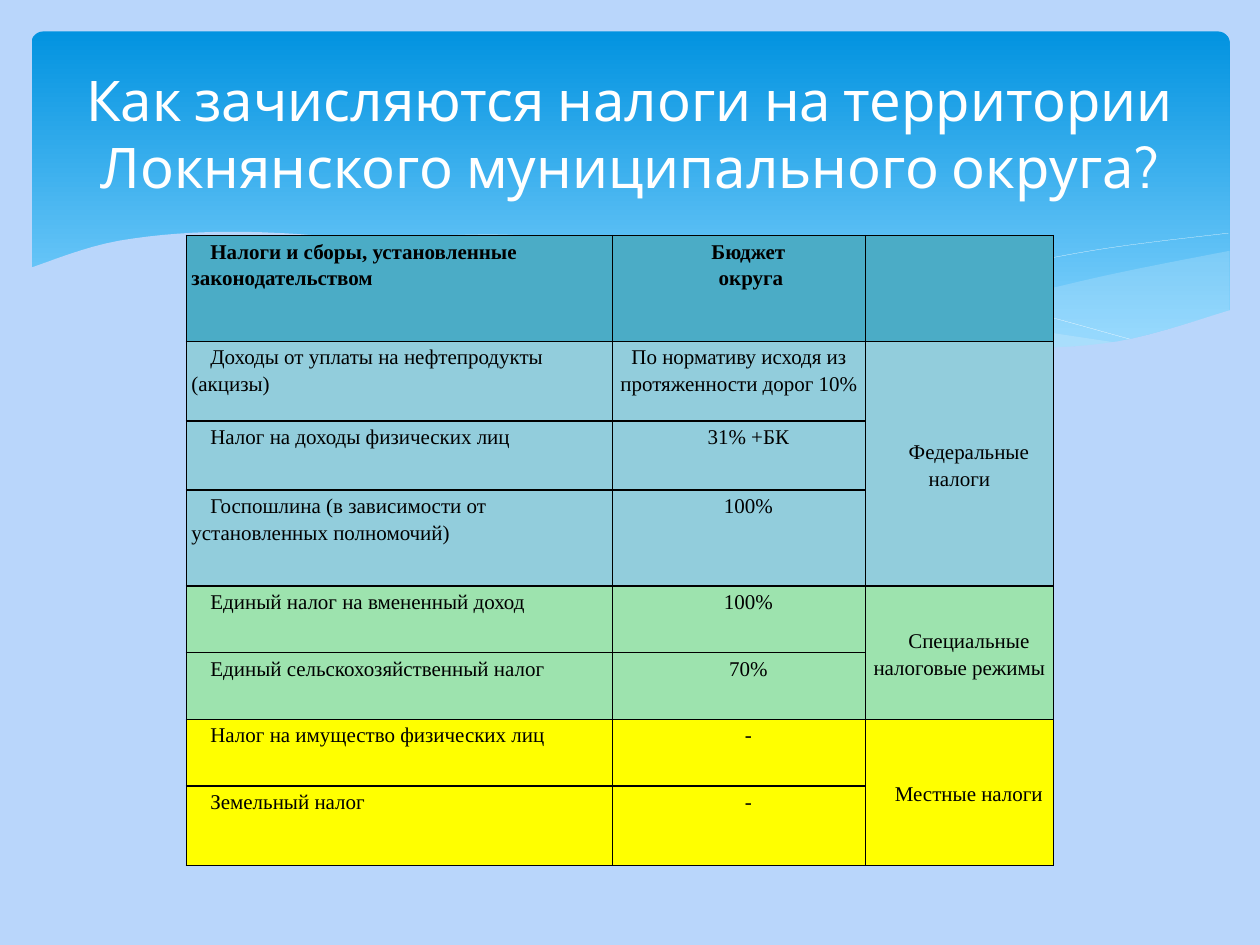
from itertools import chain

from lxml import etree
from pptx import Presentation
from pptx import util as u
from pptx.dml import color
from pptx.enum import shapes, text
from pptx.oxml import ns

BACKGROUND, WHITE, BLACK = "B9D6FB", "FFFFFF", "000000"
SKY_TOP, SKY_BOTTOM, HAZE = "0293E0", "83D3FE", "C6E7FC"
HEADER_FILL = "4BACC6"
CENTER, LEFT = text.PP_ALIGN.CENTER, text.PP_ALIGN.LEFT

BANNER = (0.25, 0.25, 9.51, 2.7)
TITLE_BOX = (0.5, 0.37, 9, 1.37)
TABLE_CORNER = (1.48, 1.87)

RIGHT_HAZE = [
    [(9.76, 1.99), (8.76, 2.19), (7.53, 2.48), (6.61, 2.65)],
    [(6.61, 2.65), (7.69, 2.77), (8.72, 2.74), (9.76, 2.47)],
]
WIDE_HAZE = [
    [(8.93, 2.73), (7.75, 2.54), (6.29, 2.22), (5.14, 1.98), (3.99, 1.86),
     (2.86, 1.91)],
    [(2.86, 1.91), (4.04, 2.11), (5.3, 2.4), (6.5, 2.64), (7.73, 2.77),
     (8.93, 2.73)],
]
FALLING_LINE = [(3.09, 1.95), (4.5, 1.88), (6.08, 2.04), (7.6, 2.33),
                (9.07, 2.72)]
RISING_LINE = [(6.13, 2.57), (7.48, 2.23), (8.66, 1.99), (9.75, 1.85)]
BANNER_EDGE = [
    [(9.77, 2.46), (8.87, 2.71), (7.93, 2.76), (6.88, 2.68), (5.79, 2.5),
     (4.47, 2.2), (3.15, 1.94), (1.93, 1.84), (0.95, 1.91), (0.23, 2.13)],
    [(0.23, 3.29), (9.77, 3.29)],
]

COLS = [3.38, 2.01, 1.49]
ROWS = [0.84, 0.63, 0.55, 0.76, 0.53, 0.53, 0.53, 0.63]
TAX_COL, SHARE_COL, GROUP_COL = range(3)
HEADER = ("Налоги и сборы, установленные законодательством",
          "Бюджет\n округа", "")
EXCISE_SHARE = "По нормативу исходя из протяженности дорог 10%"
GROUPS = [
    ("Федеральные налоги", "92CDDC", [
        ("Доходы от уплаты на нефтепродукты (акцизы)", EXCISE_SHARE),
        ("Налог на доходы физических лиц", "31% +БК"),
        ("Госпошлина (в зависимости от установленных полномочий)", "100%"),
    ]),
    ("Специальные налоговые режимы", "9DE3AE", [
        ("Единый налог на вмененный доход", "100%"),
        ("Единый сельскохозяйственный налог", "70%"),
    ]),
    ("Местные налоги", "FFFF00", [
        ("Налог на имущество физических лиц", "-"),
        ("Земельный налог", "-"),
    ]),
]


def rgb(value):
    return color.RGBColor.from_string(value)


def inch(value):
    return u.Cm(value * 2.54)


def spline(knots, steps=8):
    """Catmull-Rom curve through the knots; two knots give a straight line."""
    padded = [knots[0], *knots, knots[-1]]
    points = [knots[0]]
    for segment in zip(padded, padded[1:], padded[2:], padded[3:]):
        for step in range(1, steps + 1):
            t = step / steps
            points.append(tuple(
                b + t / 2 * (c - a + t * (2 * a - 5 * b + 4 * c - d
                                          + t * (3 * b - a - 3 * c + d)))
                for a, b, c, d in zip(*segment)))
    return points


class Deck:
    title_font, title_size = "Cabin", 32
    table_font, table_size = "Times New Roman", 12
    first_line = 0.15

    def __init__(self):
        self.prs = Presentation()
        self.prs.slide_width, self.prs.slide_height = u.Cm(25.4), u.Cm(19.05)
        self.s = self.prs.slides.add_slide(self.prs.slide_layouts[6])
        self.paint(self.s.background.fill, BACKGROUND)

    def paint(self, fill, value):
        fill.solid()
        fill.fore_color.rgb = rgb(value)

    def banner(self, box, top, bottom):
        sp = self.s.shapes.add_shape(
            shapes.MSO_SHAPE.ROUNDED_RECTANGLE, *map(inch, box))
        sp.adjustments[0] = 0.034
        sp.shadow.inherit = False
        sp.line.fill.background()
        sp.fill.gradient()
        sp.fill.gradient_angle = 270
        stops = [(0, top), (0.9, bottom)]
        for stop, (position, value) in zip(sp.fill.gradient_stops, stops):
            stop.position = position
            stop.color.rgb = rgb(value)

    def outline(self, edges, closed):
        points = [(inch(x), inch(y))
                  for x, y in chain.from_iterable(map(spline, edges))]
        fb = self.s.shapes.build_freeform(*points[0])
        fb.add_line_segments(points[1:], close=closed)
        sp = fb.convert_to_shape()
        sp.shadow.inherit = False
        return sp

    def wave(self, edges, value, opacity=100):
        sp = self.outline(edges, closed=True)
        sp.line.fill.background()
        self.paint(sp.fill, value)
        if opacity < 100:
            clr = sp._element.spPr.find(".//" + ns.qn("a:srgbClr"))
            etree.SubElement(clr, ns.qn("a:alpha"), val=str(opacity * 1000))

    def curve(self, knots, value):
        sp = self.outline([knots], closed=False)
        sp.fill.background()
        sp.line.color.rgb = rgb(value)
        sp.line.width = u.Pt(0.1)

    def style(self, p, font, size, value, align, bold=False):
        p.alignment = align
        for r in p.runs:
            r.font.name, r.font.size, r.font.bold = font, u.Pt(size), bold
            r.font.color.rgb = rgb(value)

    def title(self, box, words):
        tf = self.s.shapes.add_textbox(*map(inch, box)).text_frame
        tf.word_wrap = True
        tf.vertical_anchor = text.MSO_ANCHOR.MIDDLE
        tf.text = words
        self.style(tf.paragraphs[0], self.title_font, self.title_size, WHITE,
                   CENTER)

    def borders(self, cell):
        tc_pr = cell._tc.get_or_add_tcPr()
        for side in ("lnL", "lnR", "lnT", "lnB"):
            ln = etree.SubElement(tc_pr, ns.qn("a:" + side), w=str(u.Pt(1)))
            fill = etree.SubElement(ln, ns.qn("a:solidFill"))
            etree.SubElement(fill, ns.qn("a:srgbClr"), val=BLACK)

    def cell(self, cell, words, value, align=CENTER, bold=False,
             indent=first_line):
        self.borders(cell)
        self.paint(cell.fill, value)
        cell.margin_left = cell.margin_right = inch(0.04)
        cell.margin_top, cell.margin_bottom = inch(0.01), 0
        if not words:
            return
        cell.text_frame.text = words
        for p in cell.text_frame.paragraphs:
            self.style(p, self.table_font, self.table_size, BLACK, align, bold)
            p.line_spacing = 1.15
            p_pr = p._p.get_or_add_pPr()
            p_pr.set("marL", "0")
            p_pr.set("indent", str(inch(indent)))

    def grid(self, corner, cols, rows):
        box = (*corner, sum(cols), sum(rows))
        tbl = self.s.shapes.add_table(
            len(rows), len(cols), *map(inch, box)).table
        tbl.first_row = tbl.horz_banding = False
        for col, width in zip(tbl.columns, cols):
            col.width = inch(width)
        for row, height in zip(tbl.rows, rows):
            row.height = inch(height)
        return tbl

    def tax_table(self, corner):
        tbl = self.grid(corner, COLS, ROWS)
        for col, words in enumerate(HEADER):
            align = LEFT if col == TAX_COL else CENTER
            self.cell(tbl.cell(0, col), words, HEADER_FILL, align, bold=True)
        first = 1
        for group, value, taxes in GROUPS:
            for row, (tax, share) in enumerate(taxes, first):
                indent = 0 if share == EXCISE_SHARE else self.first_line
                label = group if row == first else ""
                self.cell(tbl.cell(row, TAX_COL), tax, value, LEFT)
                self.cell(tbl.cell(row, SHARE_COL), share, value,
                          indent=indent)
                self.cell(tbl.cell(row, GROUP_COL), label, value)
            head = tbl.cell(first, GROUP_COL)
            head.vertical_anchor = text.MSO_ANCHOR.MIDDLE
            head.merge(tbl.cell(row, GROUP_COL))
            first += len(taxes)


def main():
    deck = Deck()
    deck.banner(BANNER, SKY_TOP, SKY_BOTTOM)
    deck.wave(RIGHT_HAZE, HAZE, opacity=29)
    deck.wave(WIDE_HAZE, HAZE, opacity=40)
    for knots in (FALLING_LINE, RISING_LINE):
        deck.curve(knots, WHITE)
    deck.wave(BANNER_EDGE, BACKGROUND)
    deck.title(TITLE_BOX, "Как зачисляются налоги на территории "
                          "Локнянского муниципального округа?")
    deck.tax_table(TABLE_CORNER)
    deck.prs.save("out.pptx")


if __name__ == "__main__":
    main()
